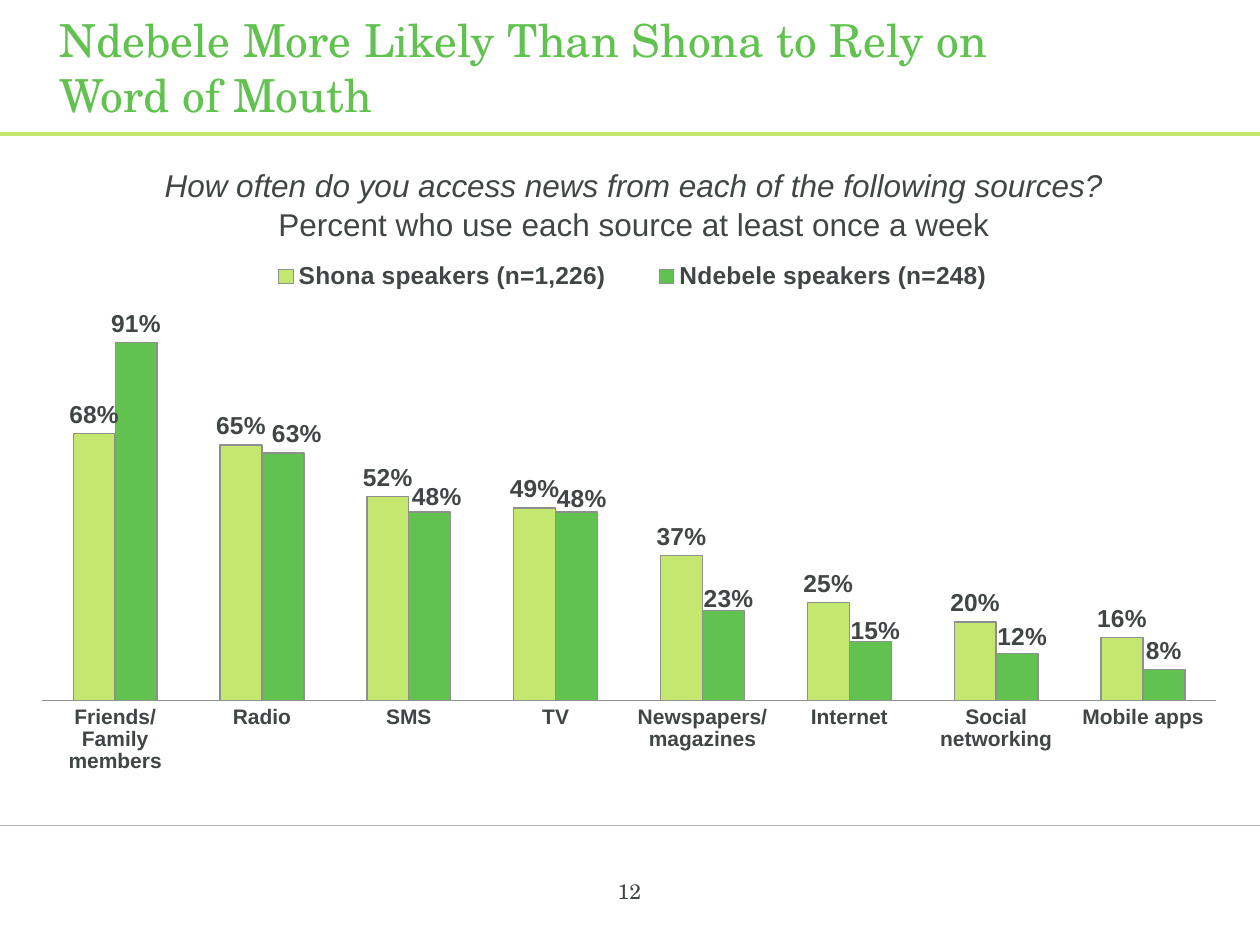
import pptx
import pptx.chart.data
import pptx.dml.color
import pptx.enum.chart
import pptx.enum.shapes
import pptx.enum.text
import pptx.oxml
import pptx.oxml.ns
import pptx.util

Pt = pptx.util.Pt
RGB = pptx.dml.color.RGBColor.from_string
ALIGN = pptx.enum.text.PP_ALIGN
ANCHOR = pptx.enum.text.MSO_ANCHOR


class Theme:
    serif, sans = "TeX Gyre Schola", "Arial"
    lime, green = RGB("C3E76F"), RGB("61C250")
    ink, outline, rule = RGB("404545"), RGB("8E908F"), RGB("B5B6B3")
    title_size, body_size, label_size, small_size = Pt(26), Pt(18), Pt(14), Pt(12)


def set_font(font, face, size, color, bold=False):
    font.name, font.size, font.bold = face, size, bold
    font.color.rgb = color


def manual_layout(**settings):
    """Build a c:layout element from its settings, in schema order."""
    items = "".join(f'<c:{tag} val="{value}"/>' for tag, value in settings.items())
    return pptx.oxml.parse_xml(
        f'<c:layout {pptx.oxml.ns.nsdecls("c")}>'
        f"<c:manualLayout>{items}</c:manualLayout></c:layout>")


deck = pptx.Presentation()
deck.slide_width, deck.slide_height = Pt(720), Pt(540)
slide = deck.slides.add_slide(deck.slide_layouts[1])

# Rules below the title and above the footer
for y, color, width in ((471.6, Theme.rule, 0.25), (76.32, Theme.lime, 2.25)):
    rule = slide.shapes.add_connector(
        pptx.enum.shapes.MSO_CONNECTOR.STRAIGHT, Pt(0), Pt(y), Pt(720), Pt(y))
    rule.line.color.rgb = color
    rule.line.width = Pt(width)
    rule._element.spPr.append(pptx.oxml.parse_xml(
        f'<a:effectLst {pptx.oxml.ns.nsdecls("a")}/>'))

# Title
title = slide.shapes.title
title.left, title.top, title.width, title.height = Pt(26.64), Pt(15.12), Pt(673.92), Pt(46.08)
title.text_frame.text = "Ndebele More Likely Than Shona to Rely on\vWord of Mouth"
title.text_frame.auto_size = pptx.enum.text.MSO_AUTO_SIZE.NONE
title.text_frame.vertical_anchor = ANCHOR.MIDDLE
headline = title.text_frame.paragraphs[0]
headline.alignment = ALIGN.LEFT
for run in headline.runs:
    set_font(run.font, Theme.serif, Theme.title_size, Theme.green)

# Survey question
question = slide.placeholders[1]
question.left, question.top, question.width, question.height = Pt(26.64), Pt(90), Pt(671.04), Pt(365.04)
question.text_frame.text = (
    "How often do you access news from each of the following sources?\v"
    "Percent who use each source at least once a week")
question.text_frame.auto_size = pptx.enum.text.MSO_AUTO_SIZE.NONE
wording = question.text_frame.paragraphs[0]
wording.alignment = ALIGN.CENTER
wording.space_before = Pt(0)
wording.line_spacing = 1.05
indents = wording._p.get_or_add_pPr()
indents.set("marL", "0")
indents.set("indent", "0")
indents.append(pptx.oxml.parse_xml(f'<a:buNone {pptx.oxml.ns.nsdecls("a")}/>'))
for run, italic in zip(wording.runs, (True, False)):
    set_font(run.font, Theme.sans, Theme.body_size, Theme.ink)
    run.font.italic = italic

# Page number
page = slide.shapes.add_textbox(Pt(275.76), Pt(498.24), Pt(167.76), Pt(37.44))
page.text_frame.word_wrap = True
page.text_frame.text = "12"
page.text_frame.paragraphs[0].alignment = ALIGN.CENTER
set_font(page.text_frame.paragraphs[0].runs[0].font, Theme.serif, Theme.small_size, Theme.ink)

# Chart of news sources by language
sources = pptx.chart.data.CategoryChartData(number_format="0%")
sources.categories = ["Friends/ Family members", "Radio", "SMS", "TV",
                      "Newspapers/ magazines", "Internet", "Social networking", "Mobile apps"]
sources.add_series("Shona speakers (n=1,226)", (0.68, 0.65, 0.52, 0.49, 0.37, 0.25, 0.2, 0.16))
sources.add_series("Ndebele speakers (n=248)", (0.91, 0.63, 0.48, 0.48, 0.23, 0.15, 0.12, 0.08))
chart_width, chart_height = 786.96, 326.88
chart = slide.shapes.add_chart(
    pptx.enum.chart.XL_CHART_TYPE.COLUMN_CLUSTERED,
    Pt(-79.2), Pt(143.28), Pt(chart_width), Pt(chart_height), sources).chart
chart.has_title = False
set_font(chart.font, Theme.sans, Theme.label_size, Theme.ink, bold=True)

# Plot area and legend
plot_area = chart._chartSpace.chart.plotArea
for old_layout in plot_area.findall(pptx.oxml.ns.qn("c:layout")):
    plot_area.remove(old_layout)
plot_area.insert(0, manual_layout(
    layoutTarget="inner", xMode="edge", yMode="edge", x=0.131, y=0.099, w=0.853, h=0.688))
chart.has_legend = True
chart.legend.position = pptx.enum.chart.XL_LEGEND_POSITION.TOP
chart.legend.include_in_layout = False
set_font(chart.legend.font, Theme.sans, Theme.label_size, Theme.ink, bold=True)
legend = chart.legend._element
for old_layout in legend.findall(pptx.oxml.ns.qn("c:layout")):
    legend.remove(old_layout)
legend.find(pptx.oxml.ns.qn("c:legendPos")).addnext(manual_layout(
    xMode="edge", yMode="edge", x=0.27, y=0.01, w=0.58, h=0.07))

# Axes
no_tick = pptx.enum.chart.XL_TICK_MARK.NONE
chart.category_axis.major_tick_mark = no_tick
chart.category_axis.format.line.color.rgb = Theme.outline
chart.category_axis.format.line.width = Pt(0.75)
set_font(chart.category_axis.tick_labels.font, Theme.sans, Theme.small_size, Theme.ink, bold=True)
shares = chart.value_axis
shares.minimum_scale, shares.maximum_scale, shares.major_unit = 0, 1, 0.2
shares.has_major_gridlines = False
shares.tick_labels.number_format = "0%"
shares.tick_labels.number_format_is_linked = False
shares.visible = False

# Columns and their labels
columns = chart.plots[0]
columns.gap_width, columns.overlap = 150, 0
columns.vary_by_categories = False
outside = pptx.enum.chart.XL_LABEL_POSITION.OUTSIDE_END
for speakers, color in zip(columns.series, (Theme.lime, Theme.green)):
    speakers.format.fill.solid()
    speakers.format.fill.fore_color.rgb = color
    speakers.format.line.color.rgb = Theme.outline
    speakers.format.line.width = Pt(0.75)
    labels = speakers.data_labels
    labels.show_value = True
    labels.number_format, labels.number_format_is_linked = "0%", False
    labels.position = outside
    set_font(labels.font, Theme.sans, Theme.label_size, Theme.ink, bold=True)

# Ndebele labels moved clear of their neighbours (points right, points down)
ndebele = columns.series[1]
shifts = {1: (8, 0), 2: (4, 2), 3: (3, 3.5), 4: (3, 4.5), 5: (3, 4.5), 6: (3, 1)}
for index, (right, down) in shifts.items():
    label = ndebele.points[index].data_label
    label.position = outside
    set_font(label.font, Theme.sans, Theme.label_size, Theme.ink, bold=True)
    label._dLbl.find(pptx.oxml.ns.qn("c:idx")).addnext(
        manual_layout(x=right / chart_width, y=down / chart_height))

deck.save("out.pptx")
